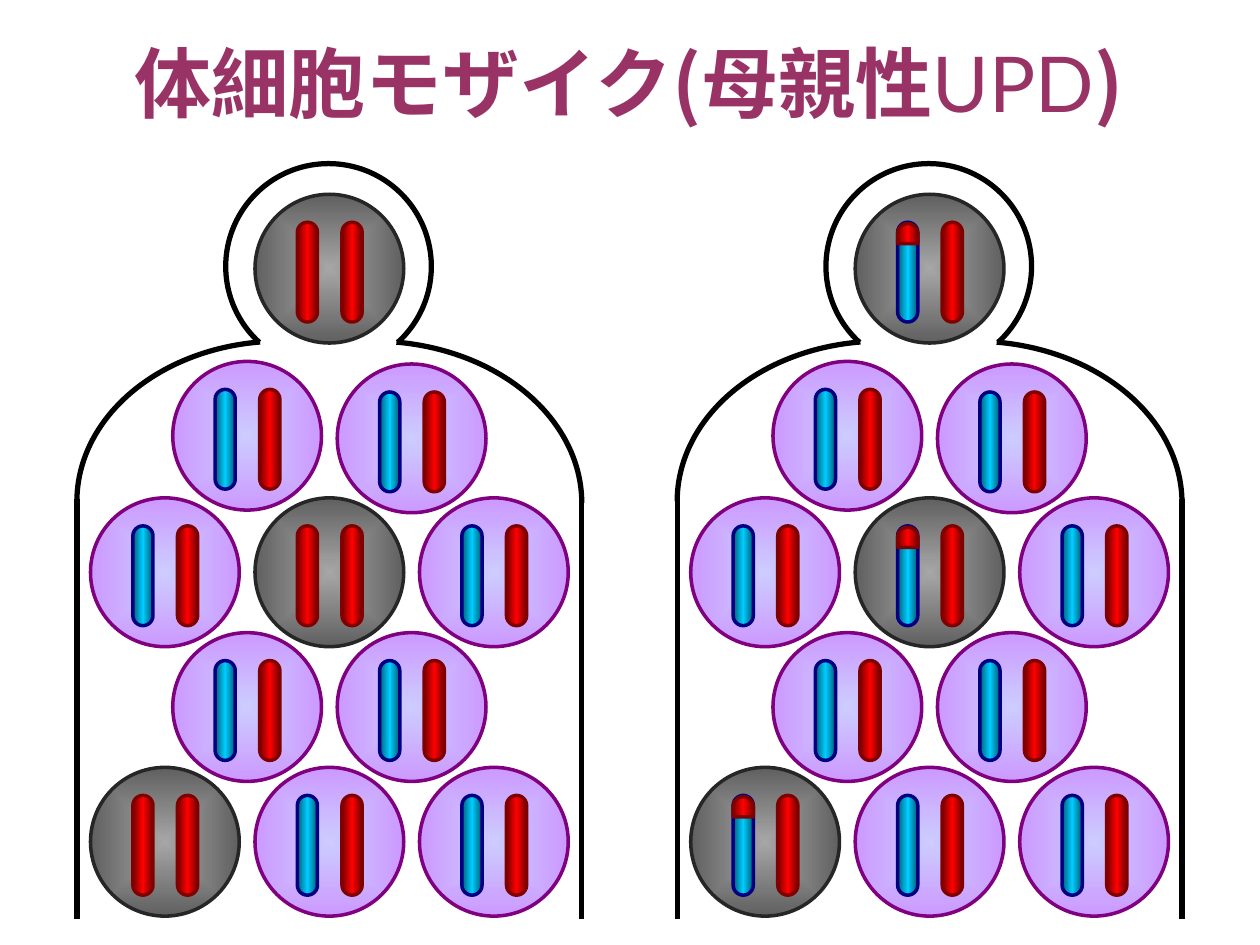
from dataclasses import dataclass
from typing import Any

from pptx import Presentation
from pptx.dml.color import RGBColor
from pptx.enum.shapes import MSO_CONNECTOR as Connector, MSO_SHAPE as Preset
from pptx.enum.text import MSO_ANCHOR as Anchor, MSO_AUTO_SIZE as AutoSize, PP_ALIGN as Align
from pptx.oxml import parse_xml
from pptx.oxml.ns import nsdecls, qn
from pptx.util import Pt


@dataclass(frozen=True)
class Paint:
    stops: tuple[str, ...]  # evenly spaced gradient colours
    line: str
    radial: bool = False


@dataclass(frozen=True)
class Theme:
    title: str = "993366"
    outline: str = "000000"
    title_size: float = 44
    japanese_font: str = "Noto Sans CJK JP"
    latin_font: str = "Lato"
    outline_width: float = 3
    shape_width: float = 2
    mosaic_cell: Paint = Paint(("A6A6A6", "606060"), "262626", True)
    normal_cell: Paint = Paint(("CCCCFF", "CC99FF"), "800080", True)
    maternal: Paint = Paint(("760000", "FF0000", "760000"), "800000")
    paternal: Paint = Paint(("005E76", "00CCFF", "005E76"), "000080")
    cap: Paint = Paint(("800000", "FF0000", "800000"), "800000")


@dataclass(frozen=True)
class Cell:
    column: int
    top: float
    mosaic: bool = False


@dataclass(frozen=True)
class Person:
    left: float
    segmental: bool  # mosaic cells carry only a maternal tip


@dataclass(frozen=True)
class BodyArc:
    left: float
    top: float
    width: float
    height: float
    start: float  # degrees
    end: float
    mirrored: bool = False


THEME = Theme()
COLUMN_START, COLUMN_STEP = 51.7, 47
CELL_SIZE = 85
CHROMOSOME_LENGTH, CHROMOSOME_WIDTH = 57, 11.5
LEFT_X, RIGHT_X, MIDDLE_Y, CAP_Y = 30, 55.5, 44.5, 22.5
BODY_LEFT, BODY_RIGHT, BODY_TOP, BODY_BOTTOM = 44, 332.5, 285, 525

PEOPLE = (Person(0, False), Person(343, True))
CELLS = (
    Cell(2, 111, True),
    Cell(1, 206.5), Cell(3, 208),
    Cell(0, 284.5), Cell(2, 284.5, True), Cell(4, 284.5),
    Cell(1, 361.5), Cell(3, 361.5),
    Cell(0, 438.5, True), Cell(2, 438.5), Cell(4, 438.5),
)
BODY_ARCS = (
    BodyArc(129, 93.5, 117.5, 117.5, 132.3, 47.6),  # head
    BodyArc(94.5, 195, 238, 185, 278.1, 0),  # right shoulder
    BodyArc(44, 195, 233, 183, 277.4, 0, True),  # left shoulder
)


def apply_gradient(shape: Any, paint: Paint) -> None:
    last = len(paint.stops) - 1
    stops = "".join(
        f'<a:gs pos="{100000 * index // last}"><a:srgbClr val="{color}"/></a:gs>'
        for index, color in enumerate(paint.stops)
    )
    direction = (
        '<a:path path="shape"><a:fillToRect l="50000" t="50000" r="50000" b="50000"/></a:path>'
        if paint.radial else '<a:lin ang="5400000" scaled="1"/>'
    )
    shape._element.spPr.append(parse_xml(
        f'<a:gradFill {nsdecls("a")} rotWithShape="1"><a:gsLst>{stops}</a:gsLst>{direction}</a:gradFill>'
    ))


def set_line(shape: Any, color: str, width: float) -> None:
    shape.line.color.rgb = RGBColor.from_string(color)
    shape.line.width = Pt(width)


def add_painted(group: Any, preset: Preset, center_x: float, center_y: float,
                width: float, height: float, paint: Paint, rotation: float = 0) -> None:
    shape = group.shapes.add_shape(
        preset, Pt(center_x - width / 2), Pt(center_y - height / 2), Pt(width), Pt(height)
    )
    shape.rotation = rotation
    if preset == Preset.ROUNDED_RECTANGLE:
        shape.adjustments[0] = 0.5
    apply_gradient(shape, paint)
    shape.shadow.inherit = False
    set_line(shape, paint.line, THEME.shape_width)


def add_cell(slide: Any, person: Person, cell: Cell) -> None:
    group = slide.shapes.add_group_shape()
    left = person.left + COLUMN_START + cell.column * COLUMN_STEP
    radius = CELL_SIZE / 2
    add_painted(group, Preset.OVAL, left + radius, cell.top + radius, CELL_SIZE, CELL_SIZE,
                THEME.mosaic_cell if cell.mosaic else THEME.normal_cell)
    # Chromosome pair
    left_paint = THEME.maternal if cell.mosaic and not person.segmental else THEME.paternal
    for x, paint in ((LEFT_X, left_paint), (RIGHT_X, THEME.maternal)):
        add_painted(group, Preset.ROUNDED_RECTANGLE, left + x, cell.top + MIDDLE_Y,
                    CHROMOSOME_LENGTH, CHROMOSOME_WIDTH, paint, 270)
    # Maternal tip
    if cell.mosaic and person.segmental:
        add_painted(group, Preset.FLOWCHART_DELAY, left + LEFT_X, cell.top + CAP_Y,
                    CHROMOSOME_WIDTH, CHROMOSOME_WIDTH, THEME.cap, 270)


def add_body(slide: Any, person: Person) -> None:
    group = slide.shapes.add_group_shape()
    for arc in BODY_ARCS:
        shape = group.shapes.add_shape(
            Preset.ARC, Pt(person.left + arc.left), Pt(arc.top), Pt(arc.width), Pt(arc.height)
        )
        # Arc angles are stored in 1/60000 degree, adjustments in 1/100000
        shape.adjustments[0], shape.adjustments[1] = arc.start * 0.6, arc.end * 0.6
        if arc.mirrored:
            shape._element.spPr.xfrm.set("flipH", "1")
        shape.fill.background()
        shape.shadow.inherit = False
        set_line(shape, THEME.outline, THEME.outline_width)
    for side in (BODY_LEFT, BODY_RIGHT):
        x = Pt(person.left + side)
        line = group.shapes.add_connector(Connector.STRAIGHT, x, Pt(BODY_TOP), x, Pt(BODY_BOTTOM))
        set_line(line, THEME.outline, THEME.outline_width)
        line._element.spPr.append(parse_xml(f'<a:effectLst {nsdecls("a")}/>'))


def add_title(slide: Any) -> None:
    title = slide.shapes.title
    title.left, title.top, title.width, title.height = Pt(4.5), Pt(7), Pt(710), Pt(79)
    frame = title.text_frame
    frame.word_wrap = True
    frame.auto_size = AutoSize.NONE
    frame.vertical_anchor = Anchor.MIDDLE
    paragraph = frame.paragraphs[0]
    paragraph.alignment = Align.CENTER
    for text, font_name, bold in (
        ("体細胞モザイク(母親性", THEME.japanese_font, True),
        ("UPD", THEME.latin_font, False),
        (")", THEME.japanese_font, True),
    ):
        run = paragraph.add_run()
        run.text = text
        run.font.size = Pt(THEME.title_size)
        run.font.bold = bold
        run.font.color.rgb = RGBColor.from_string(THEME.title)
        run.font.name = font_name
        east_asian = run._r.get_or_add_rPr().find(qn("a:latin"))
        east_asian.addnext(parse_xml(f'<a:ea {nsdecls("a")} typeface="{THEME.japanese_font}"/>'))


def main() -> None:
    presentation = Presentation()
    presentation.slide_width, presentation.slide_height = Pt(720), Pt(540)
    slide = presentation.slides.add_slide(presentation.slide_layouts[5])
    add_title(slide)
    for person in PEOPLE:
        add_body(slide, person)
        for cell in CELLS:
            add_cell(slide, person, cell)
    presentation.save("out.pptx")


if __name__ == "__main__":
    main()
